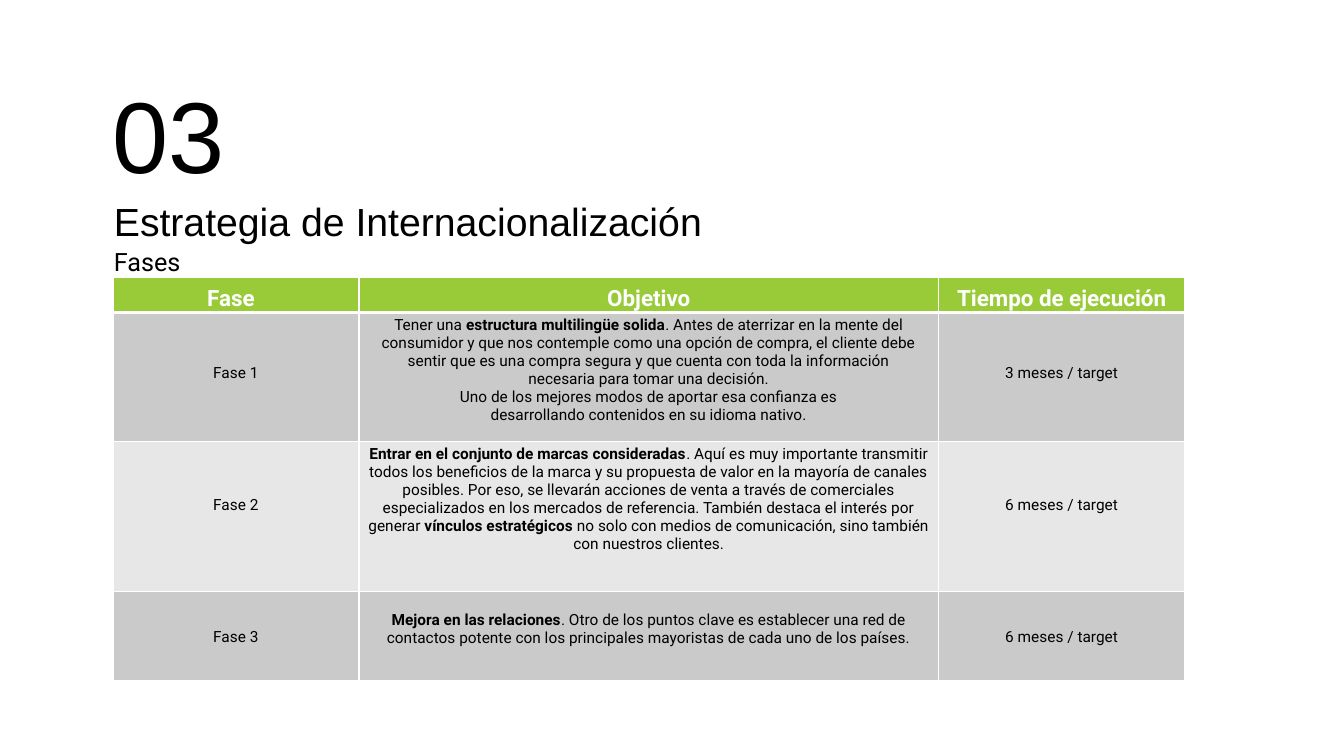
"""Build the slide with the phases of the internationalization strategy."""
from lxml import etree
from pptx import Presentation
from pptx.dml.color import RGBColor
from pptx.enum import text as t
from pptx.oxml import ns
from pptx.util import Inches, Pt

BLACK = RGBColor(0x00, 0x00, 0x00)
WHITE = RGBColor(0xFF, 0xFF, 0xFF)
GREEN = RGBColor(0x99, 0xCB, 0x38)
GRAY = RGBColor(0xCA, 0xCA, 0xCA)
PALE = RGBColor(0xE7, 0xE7, 0xE7)

NUMBER = "03"
HEADS = [("Estrategia de Internacionalización", "Arial", 28, 0),
         ("Fases", "Roboto", 18, 0.9)]
COLS = [2.44, 5.75, 2.44]
LABELS = ["Fase", "Objetivo", "Tiempo de ejecución"]
PHASES = [
    dict(name="Fase 1", time="3 meses / target", high=1.28, side=0.51, top=0.04, fill=GRAY, goal=[
        (0.2, [("Tener una ", False), ("estructura multilingüe solida", True),
               (". Antes de aterrizar en la mente del consumidor y que nos contemple como una "
                "opción de compra, el cliente debe sentir que es una compra segura y que cuenta "
                "con toda la información necesaria para tomar una decisión.", False)]),
        (0.68, [("Uno de los mejores modos de aportar esa confianza es desarrollando "
                 "contenidos en su idioma nativo.", False)])]),
    dict(name="Fase 2", time="6 meses / target", high=1.49, side=0.54, top=0.04, fill=PALE, goal=[
        (0.08, [("Entrar en el conjunto de marcas consideradas", True),
                (". Aquí es muy importante transmitir todos los beneficios de la marca y su "
                 "propuesta de valor en la mayoría de canales posibles. Por eso, se llevarán "
                 "acciones de venta a través de comerciales especializados en los mercados de "
                 "referencia. También destaca el interés por generar ", False),
                ("vínculos estratégicos", True),
                (" no solo con medios de comunicación, sino también con nuestros clientes.",
                 False)])]),
    dict(name="Fase 3", time="6 meses / target", high=0.88, side=0.36, top=0.19, fill=GRAY, goal=[
        (0.11, [("Mejora en las relaciones", True),
                (". Otro de los puntos clave es establecer una red de contactos potente con los "
                 "principales mayoristas de cada uno de los países.", False)])]),
]
HEAD_HIGH = 0.35


def write(para, words, font, size, color=BLACK, bold=False):
    """Add one formatted run."""
    run = para.add_run()
    run.text = words
    run.font.name, run.font.size, run.font.bold = font, Pt(size), bold
    run.font.color.rgb = color


def place(shape, left, top, wide, high, inset):
    """Move a placeholder and set up its frame."""
    shape.left, shape.top = Inches(left), Inches(top)
    shape.width, shape.height = Inches(wide), Inches(high)
    frame = shape.text_frame
    frame.word_wrap = True
    frame.auto_size = t.MSO_AUTO_SIZE.NONE
    frame.vertical_anchor = t.MSO_ANCHOR.TOP
    frame.margin_left = frame.margin_right = frame.margin_bottom = 0
    frame.margin_top = Inches(inset)
    return frame


def style(cell, fill, top, right, edges):
    """Set the margins, borders and fill of a cell."""
    cell.margin_left = cell.margin_bottom = 0
    cell.margin_top, cell.margin_right = Inches(top), Inches(right)
    props = cell._tc.get_or_add_tcPr()
    for side, width in zip("LRTB", edges):
        line = etree.SubElement(props, ns.qn("a:ln" + side), w=str(Pt(width)))
        solid = etree.SubElement(line, ns.qn("a:solidFill"))
        etree.SubElement(solid, ns.qn("a:srgbClr"), val=str(WHITE))
    cell.fill.solid()
    cell.fill.fore_color.rgb = fill


def fill_cell(cell, paras, size, color):
    """Write centred paragraphs, each with its side indent."""
    frame = cell.text_frame
    for i, (indent, runs) in enumerate(paras):
        para = frame.add_paragraph() if i else frame.paragraphs[0]
        para.alignment = t.PP_ALIGN.CENTER
        props = para._p.get_or_add_pPr()
        props.set("marL", str(Inches(indent)))
        props.set("marR", str(Inches(indent)))
        for words, bold in runs:
            write(para, words, "Roboto", size, color, bold)


def main():
    """Compose and save the slide."""
    deck = Presentation()
    deck.slide_width, deck.slide_height = Inches(13.33), Inches(7.5)
    slide = deck.slides.add_slide(deck.slide_layouts[1])

    para = place(slide.shapes.title, 1.12, 0.6, 1.63, 1.23, 0.12).paragraphs[0]
    para.alignment = t.PP_ALIGN.LEFT
    write(para, NUMBER, "Arial", 72)

    frame = place(slide.placeholders[1], 1.13, 1.91, 5.96, 1.29, 0.05)
    for i, (words, font, size, gap) in enumerate(HEADS):
        para = frame.add_paragraph() if i else frame.paragraphs[0]
        props = para._p.get_or_add_pPr()
        props.set("marL", "0")
        props.set("indent", "0")
        etree.SubElement(props, ns.qn("a:buNone"))
        para.space_before = Pt(gap)
        write(para, words, font, size)

    highs = [HEAD_HIGH] + [phase["high"] for phase in PHASES]
    table = slide.shapes.add_table(len(highs), len(COLS), Inches(1.12), Inches(2.75),
                                   Inches(sum(COLS)), Inches(sum(highs))).table
    table.horz_banding = False
    for col, wide in zip(table.columns, COLS):
        col.width = Inches(wide)
    for row, high in zip(table.rows, highs):
        row.height = Inches(high)

    for col, label in enumerate(LABELS):
        cell = table.cell(0, col)
        style(cell, GREEN, 0.09, 0 if col else 0.1, (1, 1, 1, 3))
        fill_cell(cell, [(0, [(label, True)])], 16, WHITE)
    for row, phase in enumerate(PHASES, 1):
        side = phase["side"]
        parts = [(side, [(0, [(phase["name"], False)])]),
                 (phase["top"], phase["goal"]),
                 (side, [(0, [(phase["time"], False)])])]
        for col, (top, paras) in enumerate(parts):
            cell = table.cell(row, col)
            style(cell, phase["fill"], top, 0, (1, 1, 3 if row == 1 else 1, 1))
            fill_cell(cell, paras, 11, BLACK)

    deck.save("out.pptx")


if __name__ == "__main__":
    main()
